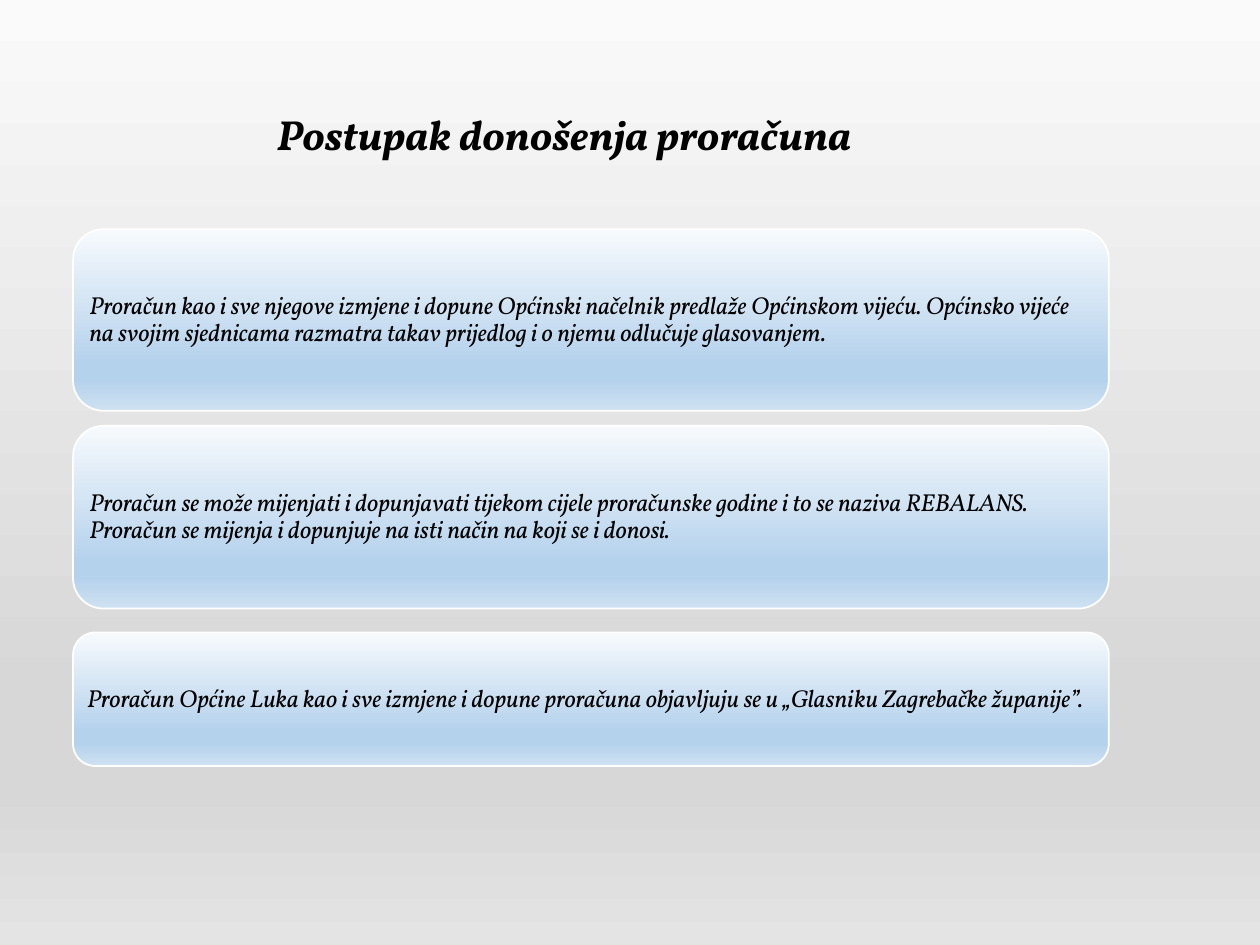
"""Build the slide on how the municipal budget is adopted."""
from dataclasses import dataclass

from lxml.etree import SubElement
from pptx import Presentation
from pptx.dml.color import RGBColor
from pptx.enum.shapes import MSO_SHAPE
from pptx.enum.text import MSO_ANCHOR, MSO_AUTO_SIZE, PP_ALIGN
from pptx.oxml.ns import qn
from pptx.util import Inches, Pt


@dataclass(frozen=True)
class Theme:
    font: str = "Vollkorn"
    text: RGBColor = RGBColor(0, 0, 0)
    outline: RGBColor = RGBColor(255, 255, 255)
    title_size: Pt = Pt(24)
    body_size: Pt = Pt(14)
    stops: tuple = (0, 74, 83, 100)
    page: tuple = ("FAFAFA", "D7D7D7", "D7D7D7", "E4E4E4")
    card: tuple = ("F7FAFD", "B5D2EC", "B5D2EC", "CEE1F2")


theme = Theme()


def paint_gradient(fill, element, colors):
    fill.gradient()
    fill.gradient_angle = 270
    stop_list = next(element.iter(qn("a:gsLst")))
    stop_list.clear()
    for percent, color in zip(theme.stops, colors):
        stop = SubElement(stop_list, qn("a:gs"), pos=str(percent * 1000))
        SubElement(stop, qn("a:srgbClr"), val=color)


def write_text(frame, text, size, alignment, bold):
    frame.word_wrap = True
    paragraph = frame.paragraphs[0]
    paragraph.text = text
    paragraph.alignment = alignment
    paragraph.font.name = theme.font
    paragraph.font.size = size
    paragraph.font.bold = bold
    paragraph.font.italic = True
    paragraph.font.color.rgb = theme.text
    return paragraph


presentation = Presentation()
presentation.slide_width = Inches(10)
presentation.slide_height = Inches(7.5)
width, height = presentation.slide_width, presentation.slide_height
slide = presentation.slides.add_slide(presentation.slide_layouts[6])
paint_gradient(slide.background.fill, slide.element, theme.page)

cards = [
    (1.82, 1.44, "Proračun kao i sve njegove izmjene i dopune Općinski načelnik predlaže "
     "Općinskom vijeću. Općinsko vijeće na svojim sjednicama razmatra takav prijedlog "
     "i o njemu odlučuje glasovanjem."),
    (3.38, 1.45, "Proračun se može mijenjati i dopunjavati tijekom cijele proračunske godine "
     "i to se naziva REBALANS. Proračun se mijenja i dopunjuje na isti način na koji "
     "se i donosi."),
    (5.02, 1.06, "Proračun Općine Luka kao i sve izmjene i dopune proračuna objavljuju se "
     "u „Glasniku Zagrebačke županije”."),
]
for top, card_height, text in cards:
    card = slide.shapes.add_shape(
        MSO_SHAPE.ROUNDED_RECTANGLE,
        int(width * 0.058), Inches(top), int(width * 0.822), Inches(card_height),
    )
    card.shadow.inherit = False
    paint_gradient(card.fill, card.element, theme.card)
    card.line.color.rgb = theme.outline
    card.line.width = Pt(1)
    frame = card.text_frame
    frame.margin_left = frame.margin_right = Inches(0.06)
    frame.margin_top = frame.margin_bottom = Inches(0.06)
    frame.vertical_anchor = MSO_ANCHOR.MIDDLE
    paragraph = write_text(frame, text, theme.body_size, PP_ALIGN.LEFT, False)
    paragraph.line_spacing = 0.9

title = slide.shapes.add_textbox(
    int(width * 0.136), int(height * 0.108), int(width * 0.623), int(height * 0.067)
)
write_text(title.text_frame, "Postupak donošenja proračuna", theme.title_size,
           PP_ALIGN.CENTER, True)
title.text_frame.auto_size = MSO_AUTO_SIZE.SHAPE_TO_FIT_TEXT

presentation.save("out.pptx")
